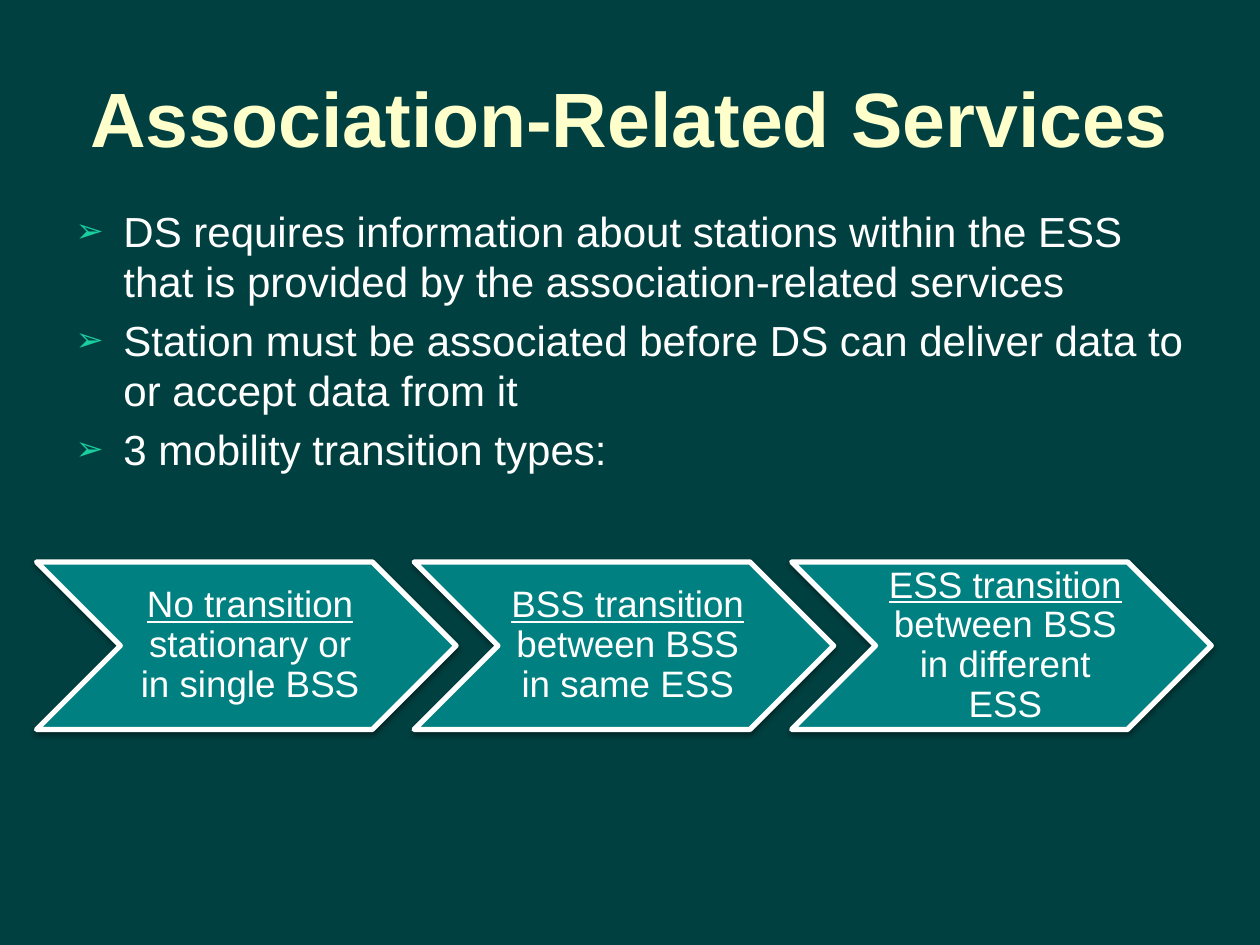
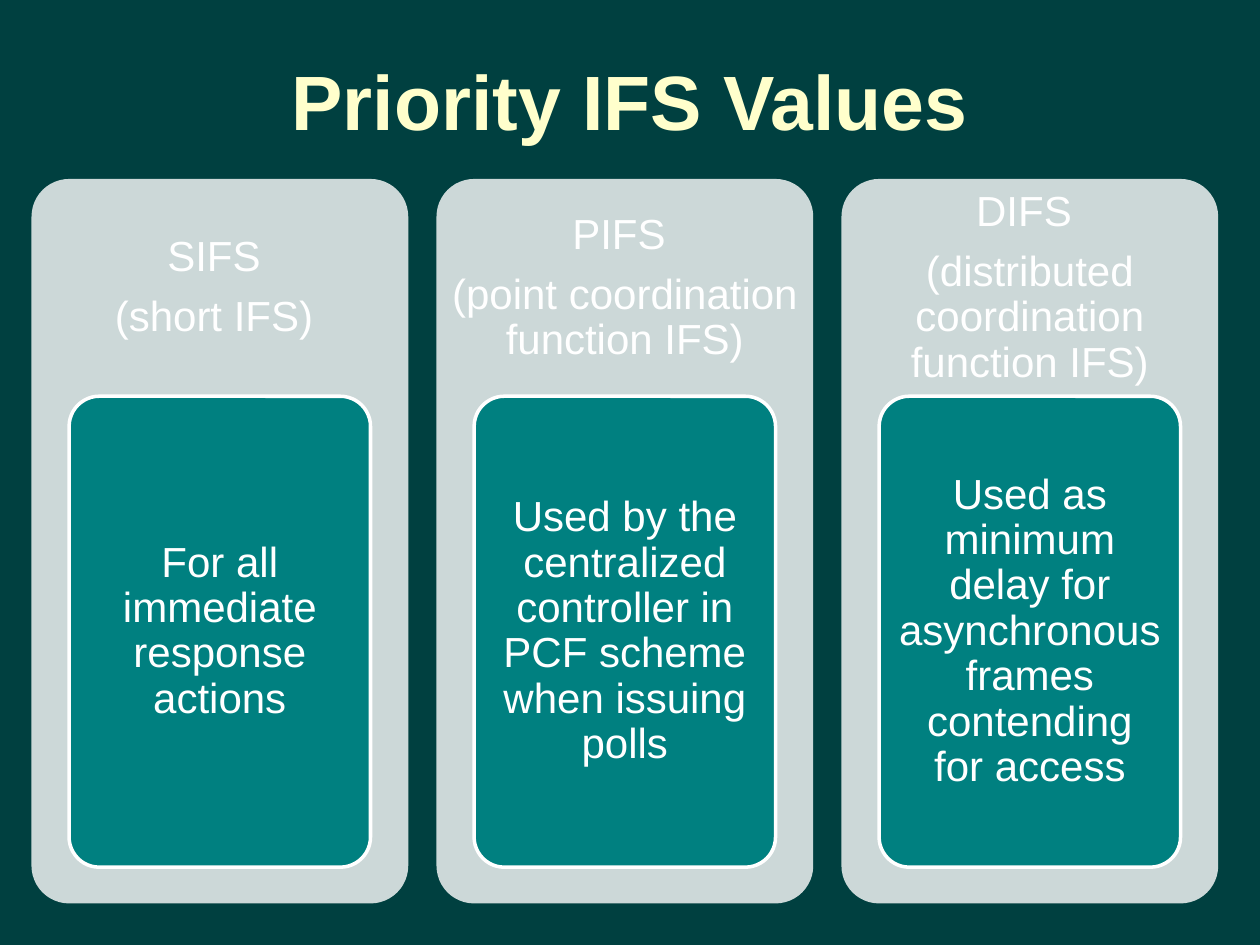
from dataclasses import dataclass

from lxml.etree import SubElement
from pptx import Presentation
from pptx.dml.color import RGBColor
from pptx.enum.shapes import MSO_SHAPE
from pptx.enum.text import MSO_ANCHOR, MSO_AUTO_SIZE, PP_ALIGN
from pptx.oxml.ns import qn
from pptx.presentation import Presentation as Deck
from pptx.shapes.autoshape import Shape
from pptx.slide import Slide
from pptx.text.text import TextFrame, _Paragraph as Paragraph
from pptx.util import Inches, Pt

COLORS = {
    "background": "004040",
    "title": "FFFFCC",
    "text": "FFFFFF",
    "bullet": "1ACE9F",
    "accent": "008080",
    "panel": "CCD8D8",
    "shadow": "000000",
}
FONT = "Arial"
TITLE_SIZE = 44
BODY_SIZE = 24
CHEVRON_SIZE = 21
TITLE_AND_BODY, TITLE_ONLY = 1, 5


@dataclass(frozen=True)
class Box:
    """A rectangle in inches."""

    left: float
    top: float
    width: float
    height: float

    def share(self, left: float, top: float, width: float, height: float) -> "Box":
        """Return the box that takes the given shares of this one."""
        return Box(
            self.left + left * self.width,
            self.top + top * self.height,
            width * self.width,
            height * self.height,
        )

    def column(self, index: int, pitch: float) -> "Box":
        """Return this box moved right by index steps of pitch widths."""
        return self.share(index * pitch, 0, 1, 1)

    def emu(self) -> list[int]:
        return [Inches(side) for side in (self.left, self.top, self.width, self.height)]


@dataclass(frozen=True)
class Transition:
    name: str
    meaning: str


@dataclass(frozen=True)
class Interval:
    heading: list[str]
    use: str


BODY_BOX = Box(0.5, 1.58, 9, 5.5)
FIRST_CHEVRON = Box(0.29, 4.46, 3.33, 1.33)
CHEVRON_PITCH = 0.9
FIRST_PANEL = Box(0.25, 1.42, 2.99, 5.75)
PANEL_PITCH = 1.075

SERVICE_POINTS = [
    "DS requires information about stations within the ESS that is provided by the "
    "association-related services",
    "Station must be associated before DS can deliver data to or accept data from it",
    "3 mobility transition types:",
]
TRANSITIONS = [
    Transition("No transition ", "stationary or in single BSS"),
    Transition("BSS transition ", "between BSS in same ESS"),
    Transition("ESS transition ", "between BSS in different ESS"),
]
INTERVALS = [
    Interval(["SIFS ", "(short IFS) "], "For all immediate response actions"),
    Interval(
        ["PIFS ", "(point coordination function IFS)"],
        "Used by the centralized controller in PCF scheme when issuing polls",
    ),
    Interval(
        ["DIFS ", "(distributed coordination function IFS)"],
        "Used as minimum delay for asynchronous frames contending for access",
    ),
]


def rgb(name: str) -> RGBColor:
    return RGBColor.from_string(COLORS[name])


def format_runs(
    paragraph: Paragraph, size: float, color: str = "text", bold: bool = False
) -> None:
    for run in paragraph.runs:
        run.font.name = FONT
        run.font.size = Pt(size)
        run.font.bold = bold
        run.font.color.rgb = rgb(color)


def place(shape: Shape, box: Box) -> None:
    shape.left, shape.top, shape.width, shape.height = box.emu()


def add_slide(deck: Deck, layout: int, title: str, title_top: float) -> Slide:
    slide = deck.slides.add_slide(deck.slide_layouts[layout])
    shape = slide.shapes.title
    place(shape, Box(0.5, title_top, 9, 1.25))
    frame = shape.text_frame
    frame.text = title
    frame.vertical_anchor = MSO_ANCHOR.MIDDLE
    frame.auto_size = MSO_AUTO_SIZE.NONE
    frame.paragraphs[0].alignment = PP_ALIGN.CENTER
    format_runs(frame.paragraphs[0], TITLE_SIZE, "title", bold=True)
    return slide


def add_bullet(paragraph: Paragraph) -> None:
    properties = paragraph._p.get_or_add_pPr()
    properties.set("marL", str(Inches(0.38)))
    properties.set("indent", str(-Inches(0.38)))
    color = SubElement(properties, qn("a:buClr"))
    SubElement(color, qn("a:srgbClr"), val=COLORS["bullet"])
    SubElement(properties, qn("a:buSzPct"), val="80000")
    SubElement(properties, qn("a:buFont"), typeface=FONT)
    SubElement(properties, qn("a:buChar"), char="➢")


def fill_body(slide: Slide, points: list[str]) -> None:
    body = slide.placeholders[1]
    place(body, BODY_BOX)
    frame = body.text_frame
    frame.text = "\n".join(points)
    frame.auto_size = MSO_AUTO_SIZE.NONE
    for paragraph in frame.paragraphs:
        paragraph.space_before = Pt(0.2 * BODY_SIZE)
        add_bullet(paragraph)
        format_runs(paragraph, BODY_SIZE)


def add_block(
    slide: Slide, kind: MSO_SHAPE, box: Box, fill: str, line_width: float = 0
) -> Shape:
    shape = slide.shapes.add_shape(kind, *box.emu())
    shape.shadow.inherit = False
    shape.fill.solid()
    shape.fill.fore_color.rgb = rgb(fill)
    if line_width:
        shape.line.color.rgb = rgb("text")
        shape.line.width = Pt(line_width)
    else:
        shape.line.fill.background()
    return shape


def add_rounded(slide: Slide, box: Box, fill: str, line_width: float = 0) -> Shape:
    shape = add_block(slide, MSO_SHAPE.ROUNDED_RECTANGLE, box, fill, line_width)
    shape.adjustments[0] = 0.1
    return shape


def add_drop_shadow(shape: Shape) -> None:
    effects = shape._element.spPr.find(qn("a:effectLst"))
    shadow = SubElement(
        effects,
        qn("a:outerShdw"),
        blurRad=str(Pt(3.1)),
        dist=str(Pt(1.6)),
        dir="5400000",
        rotWithShape="0",
    )
    color = SubElement(shadow, qn("a:srgbClr"), val=COLORS["shadow"])
    SubElement(color, qn("a:alpha"), val="38000")


def format_label(
    frame: TextFrame, size: float, margins: tuple[float, float, float, float]
) -> None:
    """Centre the text; margins are left, top, right, bottom in inches."""
    frame.word_wrap = True
    frame.vertical_anchor = MSO_ANCHOR.MIDDLE
    frame.margin_left, frame.margin_top, frame.margin_right, frame.margin_bottom = map(
        Inches, margins
    )
    for paragraph in frame.paragraphs:
        paragraph.alignment = PP_ALIGN.CENTER
        paragraph.line_spacing = 0.9
        paragraph.space_after = Pt(0.35 * size)
        format_runs(paragraph, size)


def add_transition(slide: Slide, transition: Transition, box: Box) -> None:
    chevron = add_block(slide, MSO_SHAPE.CHEVRON, box, "accent", line_width=3)
    add_drop_shadow(chevron)
    frame = chevron.text_frame
    frame.text = transition.name
    paragraph = frame.paragraphs[0]
    paragraph.runs[0].font.underline = True
    paragraph.add_run().text = transition.meaning
    format_label(frame, CHEVRON_SIZE, (0.09, 0.03, 0.03, 0.03))


def add_interval(slide: Slide, interval: Interval, box: Box) -> None:
    """Draw a panel with its heading in the top 30% and a card below it."""
    panel = add_rounded(slide, box, "panel")
    panel.text_frame.text = "\n".join(interval.heading)
    format_label(panel.text_frame, BODY_SIZE, (0.01, 0.01, 0.01, 0.7 * box.height))
    card = add_rounded(slide, box.share(0.1, 0.3, 0.8, 0.65), "accent", line_width=2)
    card.text_frame.text = interval.use
    format_label(card.text_frame, BODY_SIZE, (0.07, 0.05, 0.07, 0.05))


def add_services_slide(deck: Deck) -> None:
    slide = add_slide(deck, TITLE_AND_BODY, "Association-Related Services", 0.3)
    fill_body(slide, SERVICE_POINTS)
    for index, transition in enumerate(TRANSITIONS):
        add_transition(slide, transition, FIRST_CHEVRON.column(index, CHEVRON_PITCH))


def add_intervals_slide(deck: Deck) -> None:
    slide = add_slide(deck, TITLE_ONLY, "Priority IFS Values", 0.17)
    for index, interval in enumerate(INTERVALS):
        add_interval(slide, interval, FIRST_PANEL.column(index, PANEL_PITCH))


def main() -> None:
    presentation = Presentation()
    presentation.slide_width = Inches(10)
    presentation.slide_height = Inches(7.5)
    background = presentation.slide_master.background.fill
    background.solid()
    background.fore_color.rgb = rgb("background")
    add_services_slide(presentation)
    add_intervals_slide(presentation)
    presentation.save("out.pptx")


if __name__ == "__main__":
    main()
